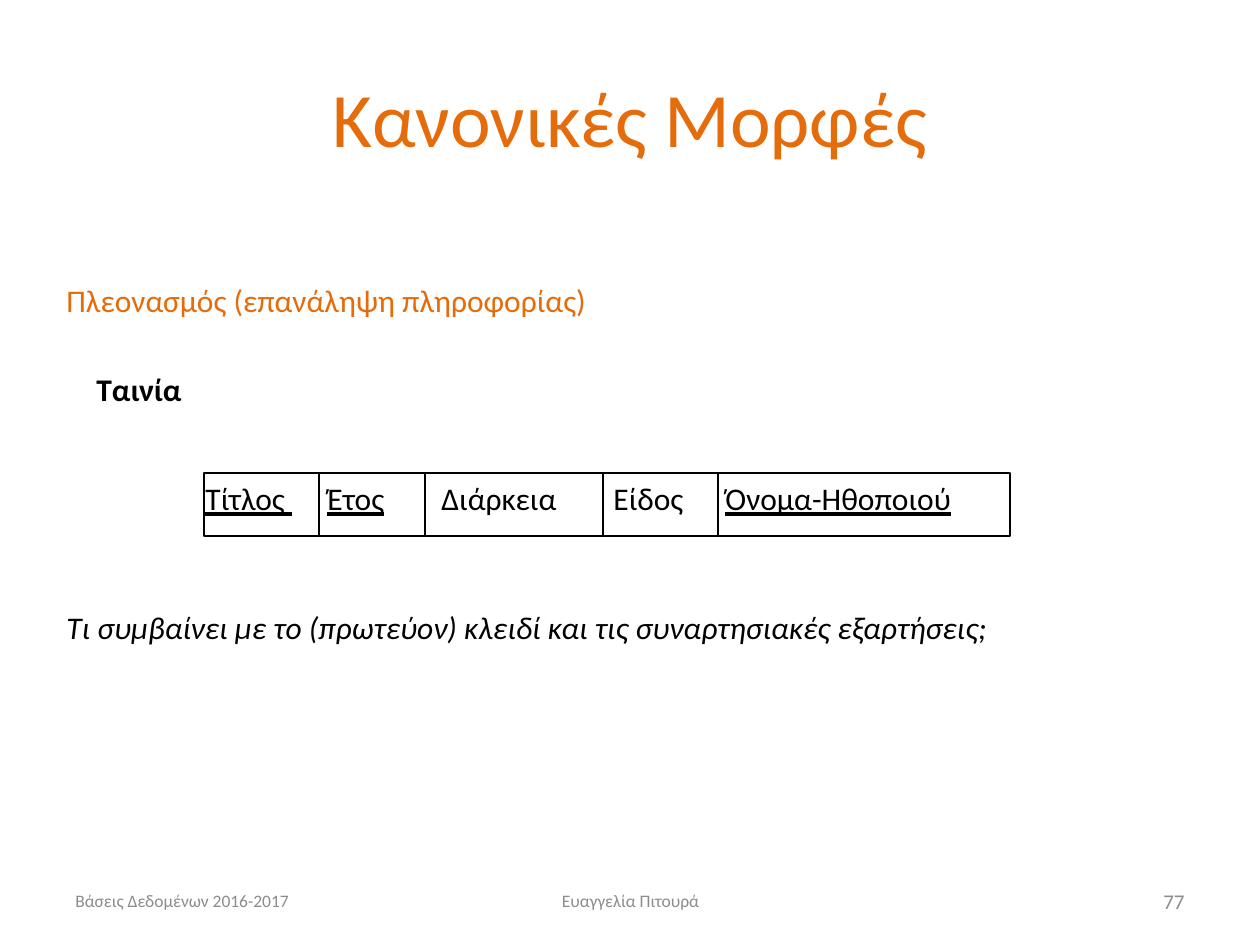
"""Build the slide on normal forms, with the schema of the film relation."""
from lxml import etree
from pptx import Presentation
from pptx.dml.color import RGBColor
from pptx.enum import shapes, text
from pptx.oxml import ns
from pptx.util import Pt

SCALE = 914400 / 126
COLORS = {"accent": "E46C0A", "ink": "000000", "muted": "8C8C8C"}
LEFT, CENTER, RIGHT = text.PP_ALIGN.LEFT, text.PP_ALIGN.CENTER, text.PP_ALIGN.RIGHT
TOP, MIDDLE = text.MSO_ANCHOR.TOP, text.MSO_ANCHOR.MIDDLE


def px(length):
    return round(length * SCALE)


def add_text(page, area, spans, size, color, align=LEFT, anchor=TOP):
    box = page.shapes.add_textbox(*map(px, area))
    frame = box.text_frame
    frame.word_wrap = True
    frame.vertical_anchor = anchor
    para = frame.paragraphs[0]
    para.alignment = align
    for words, style in spans:
        span = para.add_run()
        span.text = words
        span.font.name = "Calibri"
        span.font.size = Pt(size)
        span.font.color.rgb = RGBColor.from_string(COLORS[color])
        span.font.bold = style == "bold"
        span.font.italic = style == "italic"
        span.font.underline = style == "underline"
    return para


deck = Presentation()
deck.slide_width, deck.slide_height = px(1260), px(945)
page = deck.slides.add_slide(deck.slide_layouts[6])

question = "Τι συμβαίνει με το (πρωτεύον) κλειδί και τις συναρτησιακές εξαρτήσεις;"
for area, words, style, size, color, align, anchor in [
    ((903, 876, 294, 50), "77", None, 12, "muted", RIGHT, MIDDLE),
    ((54, 275, 1071, 50), "Πλεονασμός (επανάληψη πληροφορίας)", None, 18, "accent", LEFT, TOP),
    ((84, 364, 147, 54), "Ταινία", "bold", 18, "ink", LEFT, TOP),
    ((54, 602, 1160, 54), question, "italic", 18, "ink", LEFT, TOP),
    ((63, 38, 1134, 158), "Κανονικές Μορφές", None, 44, "accent", CENTER, MIDDLE),
    ((63, 876, 294, 50), "Βάσεις Δεδομένων 2016-2017", None, 10, "muted", LEFT, MIDDLE),
    ((431, 876, 399, 50), "Ευαγγελία Πιτουρά", None, 10, "muted", CENTER, MIDDLE),
]:
    add_text(page, area, [(words, style)], size, color, align, anchor)

attributes = [
    ("Τίτλος ", "underline"), ("\t", None), ("Έτος", "underline"),
    ("\tΔιάρκεια\tΕίδος\t", None), ("Όνομα-Ηθοποιού", "underline"),
]
para = add_text(page, (193, 473, 939, 50), attributes, 18, "ink")
tabs = etree.SubElement(para._p.get_or_add_pPr(), ns.qn("a:tabLst"))
for stop in (122, 236, 408, 520):
    etree.SubElement(tabs, ns.qn("a:tab"), pos=str(px(stop)), algn="l")

schema = page.shapes.add_shape(shapes.MSO_SHAPE.RECTANGLE, *map(px, (204, 473, 806, 63)))
schema.shadow.inherit = False
schema.fill.background()
schema.line.color.rgb = RGBColor.from_string(COLORS["ink"])
schema.line.width = Pt(0.75)

for x in (319, 425, 603, 718):
    divider = page.shapes.add_connector(
        shapes.MSO_CONNECTOR.STRAIGHT, px(x), px(473), px(x), px(536))
    divider.line.color.rgb = RGBColor.from_string(COLORS["ink"])
    divider.line.width = Pt(0.75)
    etree.SubElement(divider._element.spPr, ns.qn("a:effectLst"))

deck.save("out.pptx")
